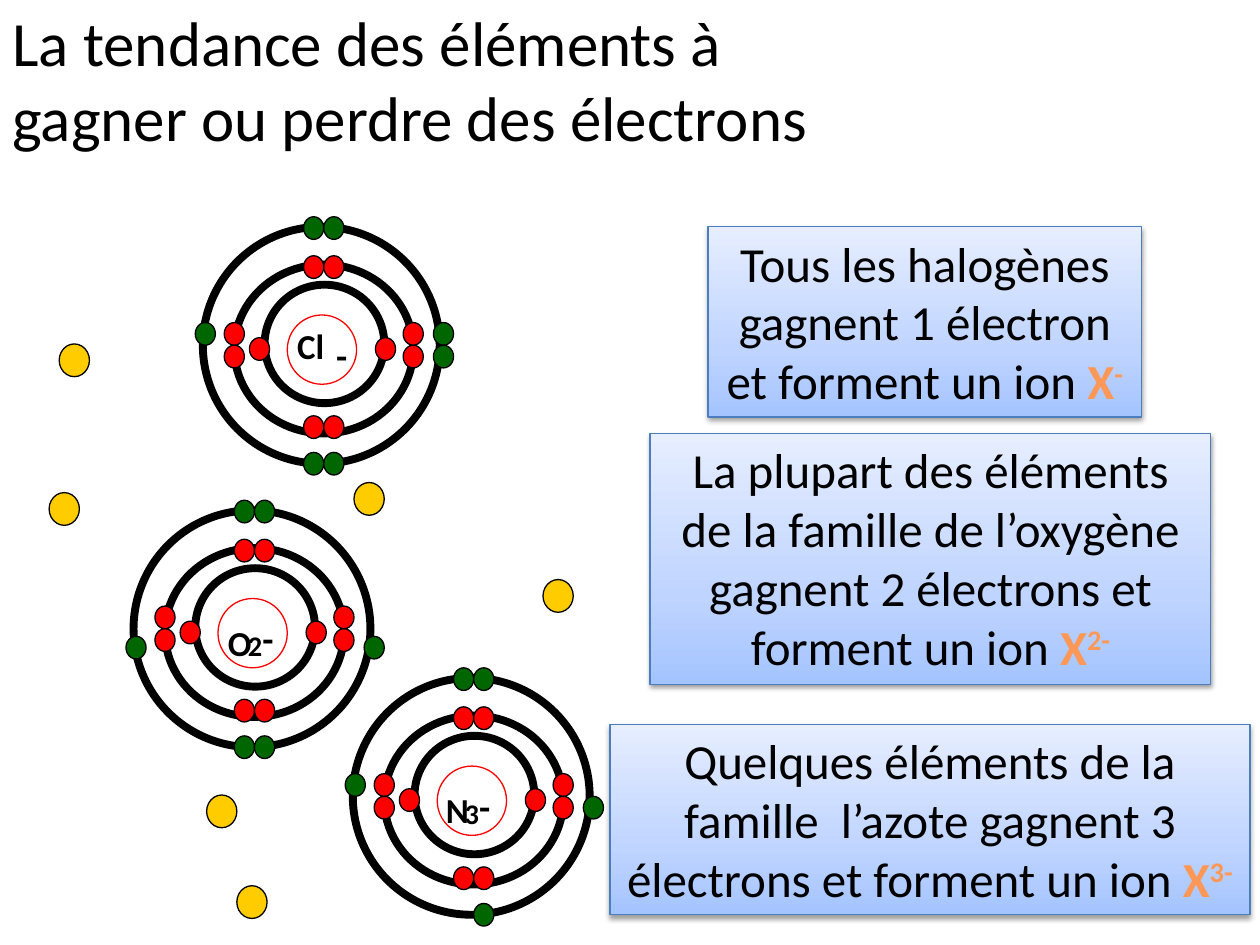
from copy import deepcopy
from itertools import product

from lxml import etree
from pptx import Presentation
from pptx import util as u
from pptx.dml.color import RGBColor
from pptx.enum import shapes, text
from pptx.oxml import ns

THEME = {
    "font": "Calibri",
    "ink": "000000", "nucleus": "FFFFFF", "nucleus_edge": "FF0000",
    "inner": "FF0000", "outer": "006600", "free": "FFCC00",
    "card": [(0, "A4C4FF"), (0.35, "BFD4FF"), (1, "E6EEFF")], "card_edge": "4B7EBC",
    "ion": [(0, "9D4700"), (0.78, "FF9856"), (1, "FFF5F1")],
    "title_size": 36, "card_size": 28, "symbol_size": 20,
    "number_size": 28, "sign_size": 36,
    "thin": 0.75, "thick": 4.5,
}
COLUMNS, ROWS = 1000, 750

TITLE = "La tendance des éléments à gagner ou perdre des électrons"
TITLE_PLACE = (0, 0, 680, 125)

CARDS = [
    ((562, 180, 344, 151), "Tous les halogènes gagnent 1 électron et forment un ion ", "-"),
    ((516, 344, 445, 199), "La plupart des éléments de la famille de l’oxygène "
                           "gagnent 2 électrons et forment un ion ", "2-"),
    ((484, 575, 508, 151), "Quelques éléments de la famille  l’azote gagnent 3 "
                           "électrons et forment un ion ", "3-"),
]

SHELLS = [(0, 0, 188, 188), (25, 30, 142, 134), (49, 46, 95, 94)]
NUCLEUS = (67, 70, 55, 55)
PAIR_X, PAIR_Y = (80, 96), (76, 94)
TOP, BOTTOM, LEFT, RIGHT = -8, 179, -6, 183
INNER = [*product((37, 137), (88,)), *product(PAIR_X, (23, 150)), *product((17, 159), PAIR_Y)]
OUTER_TOP = [*product(PAIR_X, (TOP,))]
OUTER_BOTTOM = [*product(PAIR_X, (BOTTOM,))]

ATOMS = [
    {"origin": (161, 180), "symbol": "Cl", "symbol_at": (65, 73),
     "number": "", "charge_at": (96, 73),
     "outer": OUTER_TOP + OUTER_BOTTOM + [(LEFT, 76), *product((RIGHT,), PAIR_Y)]},
    {"origin": (106, 405), "symbol": "O", "symbol_at": (65, 83),
     "number": "2", "charge_at": (81, 73),
     "outer": OUTER_TOP + OUTER_BOTTOM + [(LEFT, 100), (RIGHT, 100)]},
    {"origin": (280, 538), "symbol": "N", "symbol_at": (64, 83),
     "number": "3", "charge_at": (79, 73),
     "outer": OUTER_TOP + [OUTER_BOTTOM[1], (LEFT, 76), (RIGHT, 94)]},
]
ELECTRON, FREE_ELECTRON = (16, 18), (24, 26)
SYMBOL_BOX, CHARGE_BOX = (63, 43), (63, 51)
FREE = [(47, 273), (39, 391), (164, 631), (281, 383), (188, 703), (431, 460)]

deck = Presentation()
deck.slide_width, deck.slide_height = u.Inches(10), u.Inches(7.5)
slide = deck.slides.add_slide(deck.slide_layouts[6])


def on_grid(place):
    col, row = deck.slide_width / COLUMNS, deck.slide_height / ROWS
    return [round(part * unit) for part, unit in zip(place, (col, row, col, row))]


def rgb(name):
    return RGBColor.from_string(THEME.get(name, name))


def blend(fill, stops, angle):
    fill.gradient()
    fill.gradient_angle = angle
    first = fill.gradient_stops[0]._gs
    first.getparent().append(deepcopy(first))
    for stop, (position, color) in zip(fill.gradient_stops, stops):
        stop.position = position
        stop.color.rgb = rgb(color)


def outline(kind, place, edge, width):
    form = slide.shapes.add_shape(kind, *on_grid(place))
    form.shadow.inherit = False
    form.line.color.rgb = rgb(edge)
    form.line.width = u.Pt(width)
    return form


def circle(place, fill=None, edge="ink", width=THEME["thin"]):
    form = outline(shapes.MSO_SHAPE.OVAL, place, edge, width)
    if fill:
        form.fill.solid()
        form.fill.fore_color.rgb = rgb(fill)
    else:
        form.fill.background()


def write(paragraph, words, size, bold=False, raised=False, blended=False):
    run = paragraph.add_run()
    run.text = words
    run.font.name = THEME["font"]
    run.font.size = u.Pt(size)
    run.font.bold = bold
    if blended:
        blend(run.font.fill, THEME["ion"], 270)
    else:
        run.font.color.rgb = rgb("ink")
    if raised:
        run._r.get_or_add_rPr().set("baseline", "30000")


def label(place, anchor=text.MSO_ANCHOR.TOP):
    frame = slide.shapes.add_textbox(*on_grid(place)).text_frame
    frame.word_wrap = True
    frame.vertical_anchor = anchor
    return frame.paragraphs[0]


def draw_atom(atom):
    left, top = atom["origin"]

    def within(spot, size):
        return (left + spot[0], top + spot[1], *size)

    for shell in SHELLS:
        circle(within(shell[:2], shell[2:]), width=THEME["thick"])
    circle(within(NUCLEUS[:2], NUCLEUS[2:]), "nucleus", "nucleus_edge")
    for color, spots in (("inner", INNER), ("outer", atom["outer"])):
        for spot in spots:
            circle(within(spot, ELECTRON), color)
    write(label(within(atom["symbol_at"], SYMBOL_BOX)), atom["symbol"],
          THEME["symbol_size"], bold=True)
    charge = label(within(atom["charge_at"], CHARGE_BOX))
    if atom["number"]:
        write(charge, atom["number"], THEME["number_size"], bold=True, raised=True)
    write(charge, "-", THEME["sign_size"], bold=True, raised=True)


def draw_card(place, sentence, charge):
    card = outline(shapes.MSO_SHAPE.RECTANGLE, place, "card_edge", THEME["thin"])
    blend(card.fill, THEME["card"], 90)
    effects = card._element.spPr.find(ns.qn("a:effectLst"))
    shadow = etree.SubElement(effects, ns.qn("a:outerShdw"), blurRad=str(u.Pt(3.1)),
                              dist=str(u.Pt(1.6)), dir="5400000", rotWithShape="0")
    tint = etree.SubElement(shadow, ns.qn("a:srgbClr"), val=THEME["ink"])
    etree.SubElement(tint, ns.qn("a:alpha"), val="38000")
    card.text_frame.word_wrap = True
    card.text_frame.vertical_anchor = text.MSO_ANCHOR.TOP
    paragraph = card.text_frame.paragraphs[0]
    paragraph.alignment = text.PP_ALIGN.CENTER
    size = THEME["card_size"]
    write(paragraph, sentence, size)
    write(paragraph, "X", size, bold=True, blended=True)
    write(paragraph, charge, size, bold=True, raised=True, blended=True)


write(label(TITLE_PLACE, text.MSO_ANCHOR.MIDDLE), TITLE, THEME["title_size"])
for atom in ATOMS:
    draw_atom(atom)
for spot in FREE:
    circle((*spot, *FREE_ELECTRON), "free")
for card in CARDS:
    draw_card(*card)

deck.save("out.pptx")
